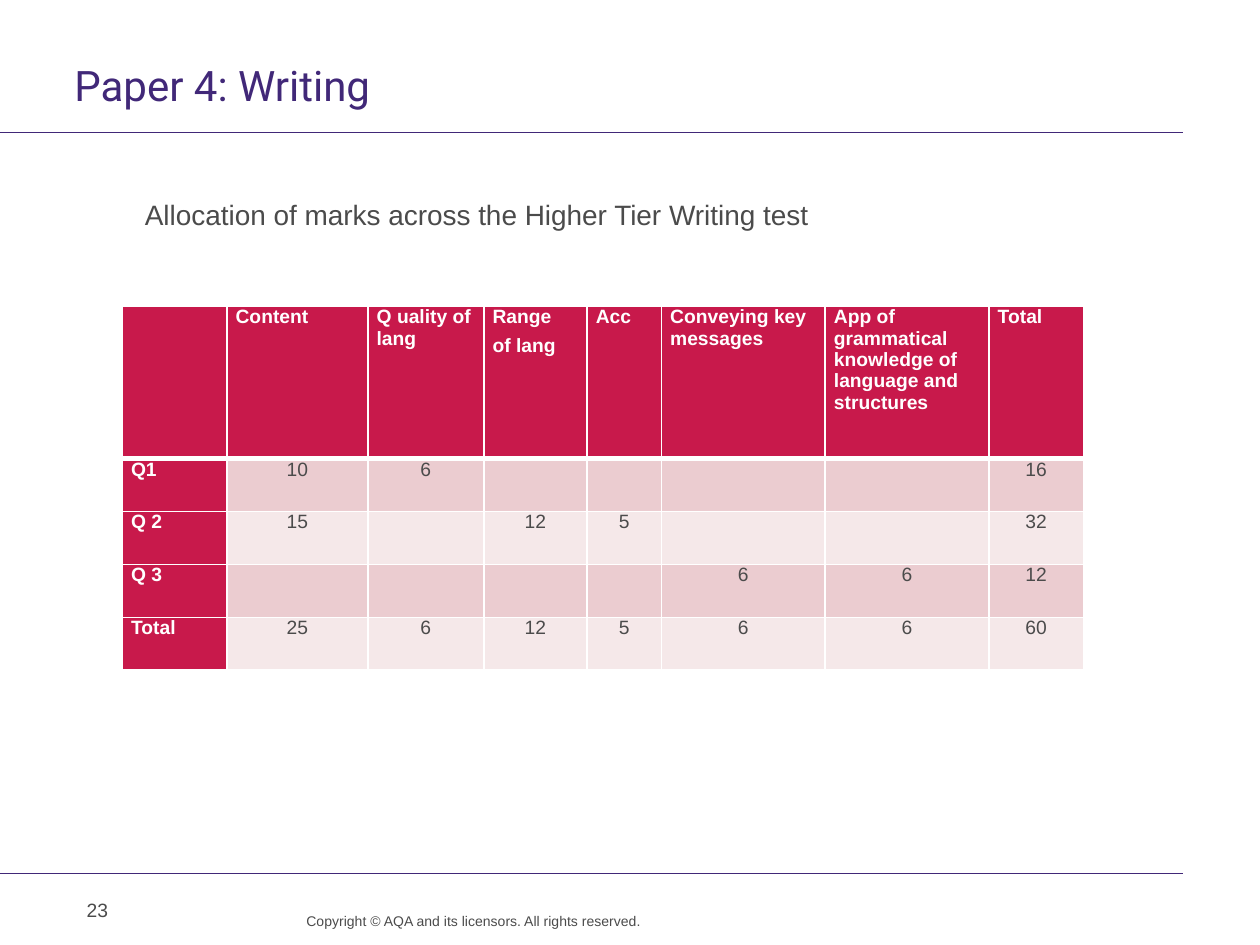
from lxml import etree
from pptx import Presentation
from pptx.dml.color import RGBColor
from pptx.enum import shapes, text
from pptx.oxml import ns
from pptx.util import Inches, Pt

TITLE = "Paper 4: Writing"
INTRO = "Allocation of marks across the Higher Tier Writing test"
PAGE = "23"
NOTICE = "Copyright © AQA and its licensors. All rights reserved."
MARKS = [
    ["", "Content", "Q uality of lang", "Range\nof lang", "Acc",
     "Conveying key messages",
     "App of grammatical knowledge of language and structures", "Total"],
    ["Q1", "10", "6", "", "", "", "", "16"],
    ["Q 2", "15", "", "12", "5", "", "", "32"],
    ["Q 3", "", "", "", "", "6", "6", "12"],
    ["Total", "25", "6", "12", "5", "6", "6", "60"],
]
WIDTHS = [0.83, 1.12, 0.92, 0.82, 0.59, 1.3, 1.3, 0.75]
HEIGHTS = [1.21] + [0.42] * 4
RULES = [1.05, 6.93]

PURPLE, GREY, WHITE, RED = "412878", "4B4B4B", "FFFFFF", "C8194B"
BANDS = ["EBCCD0", "F5E8E9"]


def tint(form, color):
    form.rgb = RGBColor.from_string(color)


def style(para, size, color, name="Arial", bold=False):
    font = para.font
    font.size, font.name, font.bold = Pt(size), name, bold
    tint(font.color, color)


def inset(frame, left, top, right, bottom):
    frame.margin_left, frame.margin_top = Inches(left), Inches(top)
    frame.margin_right, frame.margin_bottom = Inches(right), Inches(bottom)


def write(shape, words, box, size, color, pads, name="Arial"):
    """Place a text shape, fill it and return its paragraph."""
    shape.left, shape.top, shape.width, shape.height = map(Inches, box)
    frame = shape.text_frame
    frame.word_wrap = True
    frame.auto_size = text.MSO_AUTO_SIZE.NONE
    frame.vertical_anchor = text.MSO_ANCHOR.TOP
    inset(frame, *pads)
    frame.text = words
    para = frame.paragraphs[0]
    para.alignment = text.PP_ALIGN.LEFT
    style(para, size, color, name)
    return para


def add_text(slide, *spec):
    return write(slide.shapes.add_textbox(0, 0, 0, 0), *spec)


def add_rule(slide, y):
    line = slide.shapes.add_connector(
        shapes.MSO_CONNECTOR.STRAIGHT, 0, Inches(y), Inches(9.39), Inches(y))
    line.line.width = Pt(0.6)
    tint(line.line.color, PURPLE)
    etree.SubElement(line._element.spPr, ns.qn("a:effectLst"))


def edge(cell, side, width):
    props = cell._tc.get_or_add_tcPr()
    line = etree.SubElement(props, ns.qn("a:ln" + side), w=str(Pt(width)))
    fill = etree.SubElement(line, ns.qn("a:solidFill"))
    etree.SubElement(fill, ns.qn("a:srgbClr"), val=WHITE)


def fill_cell(cell, words, row, col):
    head = row == 0
    label = head or col == 0
    thick = {0: "B", 1: "T"}.get(row)
    for side in "LRTB":
        edge(cell, side, 3 if side == thick else 1)
    cell.fill.solid()
    tint(cell.fill.fore_color, RED if label else BANDS[(row - 1) % 2])
    inset(cell, 0.07, 0, 0.07, 0)
    cell.text = words
    for i, para in enumerate(cell.text_frame.paragraphs):
        style(para, 11, WHITE if label else GREY, bold=label)
        if not label:
            para.alignment = text.PP_ALIGN.CENTER
        if head:
            para.space_after = Pt(2)
            if i:
                para.space_before = Pt(2)


def add_marks(slide):
    table = slide.shapes.add_table(
        len(MARKS), len(WIDTHS), Inches(0.97), Inches(2.43),
        Inches(sum(WIDTHS)), Inches(sum(HEIGHTS))).table
    table.first_col = True
    for col, width in zip(table.columns, WIDTHS):
        col.width = Inches(width)
    for row, height in zip(table.rows, HEIGHTS):
        row.height = Inches(height)
    for r, row in enumerate(MARKS):
        for c, words in enumerate(row):
            fill_cell(table.cell(r, c), words, r, c)


def main():
    deck = Presentation()
    deck.slide_width, deck.slide_height = Inches(10), Inches(7.5)
    slide = deck.slides.add_slide(deck.slide_layouts[5])
    for y in RULES:
        add_rule(slide, y)
    add_text(slide, PAGE, (0.59, 7.08, 2.33, 0.4), 11, GREY,
             (0.1, 0.05, 0.1, 0.05))
    title = write(slide.shapes.title, TITLE, (0.59, 0.48, 8.8, 0.47), 24,
                  PURPLE, (0, 0, 0.1, 0), "Roboto")
    title.line_spacing = Pt(28)
    intro = add_text(slide, INTRO, (1.15, 1.57, 7.87, 5.28), 16, GREY,
                     (0, 0, 0.1, 0))
    intro.space_after = Pt(6)
    notice = add_text(slide, NOTICE, (2.16, 7.24, 2.93, 0.26), 8, GREY,
                      (0, 0, 0, 0))
    notice.alignment = text.PP_ALIGN.RIGHT
    notice.line_spacing = Pt(10)
    add_marks(slide)
    deck.save("out.pptx")


if __name__ == "__main__":
    main()
